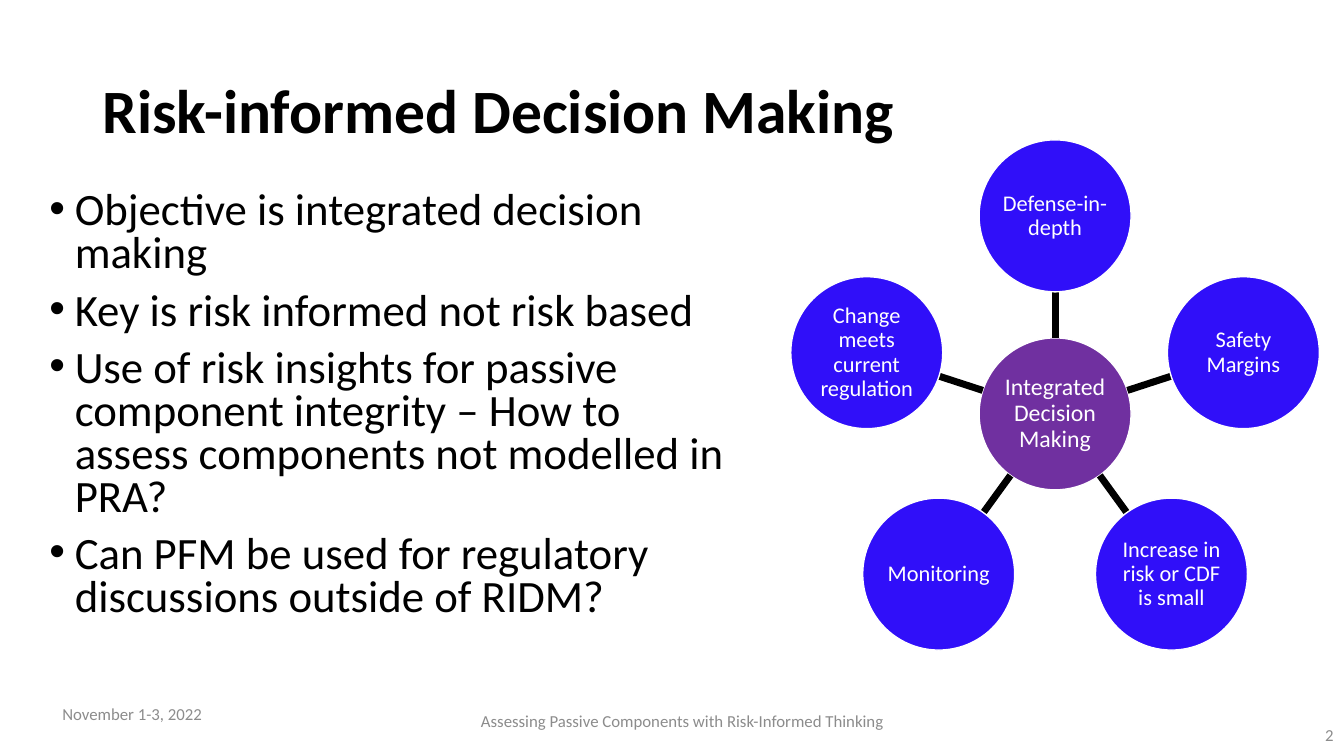
from dataclasses import dataclass
from math import cos, pi, sin

from lxml.etree import SubElement
from pptx import Presentation
from pptx.dml.color import RGBColor
from pptx.enum.shapes import MSO_CONNECTOR, MSO_SHAPE
from pptx.enum.text import MSO_ANCHOR, MSO_AUTO_SIZE, PP_ALIGN
from pptx.oxml.ns import qn
from pptx.util import Cm, Pt


@dataclass(frozen=True)
class Theme:
    font: str = "Calibri"
    ink: str = "000000"
    paper: str = "FFFFFF"
    hub: str = "7030A0"
    node: str = "300FF9"
    muted: str = "8C8C8C"
    title: int = 44
    body: int = 32
    core: int = 17
    label: int = 16
    foot: int = 12


class Deck:
    def __init__(self, theme, slide):
        self.theme = theme
        self.slide = slide

    def place(self, shape, box):
        shape.left, shape.top, shape.width, shape.height = map(Cm, box)

    def add_text(self, par, text, size, color, bold=False):
        run = par.add_run()
        run.text = text
        font = run.font
        font.name = self.theme.font
        font.size = Pt(size)
        font.bold = bold
        font.color.rgb = RGBColor.from_string(color)

    def title(self, text, box):
        shape = self.slide.shapes.title
        self.place(shape, box)
        frame = shape.text_frame
        frame.auto_size = MSO_AUTO_SIZE.NONE
        frame.vertical_anchor = MSO_ANCHOR.MIDDLE
        par = frame.paragraphs[0]
        par.alignment = PP_ALIGN.LEFT
        par.line_spacing = 0.9
        self.add_text(par, text, self.theme.title, self.theme.ink, True)

    def bullets(self, items, box):
        shape = self.slide.placeholders[1]
        self.place(shape, box)
        frame = shape.text_frame
        frame.auto_size = MSO_AUTO_SIZE.NONE
        for i, text in enumerate(items):
            par = frame.add_paragraph() if i else frame.paragraphs[0]
            props = par._p.get_or_add_pPr()
            props.set("marL", str(Cm(0.64)))
            props.set("indent", str(Cm(-0.64)))
            SubElement(props, qn("a:buFont"), typeface="Arial")
            SubElement(props, qn("a:buChar"), char="•")
            par.line_spacing = 0.8
            par.space_before = Pt(10 if i else 0)
            self.add_text(par, text, self.theme.body, self.theme.ink)

    def circle(self, text, x, y, width, fill, size):
        """Draw a labelled circle centred on x, y."""
        shape = self.slide.shapes.add_shape(
            MSO_SHAPE.OVAL, Cm(x - width / 2), Cm(y - width / 2), Cm(width), Cm(width))
        shape.shadow.inherit = False
        shape.fill.solid()
        shape.fill.fore_color.rgb = RGBColor.from_string(fill)
        shape.line.color.rgb = RGBColor.from_string(self.theme.paper)
        shape.line.width = Pt(1)
        frame = shape.text_frame
        frame.word_wrap = True
        frame.vertical_anchor = MSO_ANCHOR.MIDDLE
        frame.margin_left = frame.margin_right = Cm(0.03)
        frame.margin_top = frame.margin_bottom = Cm(0.03)
        par = frame.paragraphs[0]
        par.alignment = PP_ALIGN.CENTER
        par.line_spacing = 0.9
        self.add_text(par, text, size, self.theme.paper)

    def spoke(self, start, end):
        line = self.slide.shapes.add_connector(
            MSO_CONNECTOR.STRAIGHT, *map(Cm, start + end))
        line.line.color.rgb = RGBColor.from_string(self.theme.ink)
        line.line.width = Pt(5)
        SubElement(line._element.spPr, qn("a:effectLst"))

    def wheel(self, core, labels, x, y, reach, width):
        """Ring the core with labelled circles, clockwise from the top."""
        theme = self.theme
        self.circle(core, x, y, width, theme.hub, theme.core)

        def point(turn, far):
            return x + far * sin(turn), y - far * cos(turn)

        for i, text in enumerate(labels):
            turn = 2 * pi * i / len(labels)
            self.spoke(point(turn, width / 2), point(turn, reach - width / 2))
            self.circle(text, *point(turn, reach), width, theme.node, theme.label)

    def footer(self, text, box, align):
        frame = self.slide.shapes.add_textbox(*map(Cm, box)).text_frame
        frame.word_wrap = True
        frame.vertical_anchor = MSO_ANCHOR.MIDDLE
        par = frame.paragraphs[0]
        par.alignment = align
        self.add_text(par, text, self.theme.foot, self.theme.muted)


def main():
    show = Presentation()
    show.slide_width, show.slide_height = Cm(33.87), Cm(19.05)
    deck = Deck(Theme(), show.slides.add_slide(show.slide_layouts[1]))
    deck.title("Risk-informed Decision Making", (2.33, 1.01, 29.21, 3.68))
    deck.bullets([
        "Objective is integrated decision making",
        "Key is risk informed not risk based",
        "Use of risk insights for passive component integrity – "
        "How to assess components not modelled in PRA?",
        "Can PFM be used for regulatory discussions outside of RIDM?",
    ], (0.99, 4.7, 17.7, 11.66))
    deck.wheel("Integrated Decision Making", [
        "Defense-in-depth",
        "Safety Margins",
        "Increase in risk or CDF is small",
        "Monitoring",
        "Change meets current regulation",
    ], x=26.59, y=10.43, reach=4.99, width=3.83)
    deck.footer("November 1-3, 2022", (1.32, 17.48, 7.62, 1.02), PP_ALIGN.LEFT)
    deck.footer("Assessing Passive Components with Risk-Informed Thinking",
                (11.23, 17.65, 11.94, 1.02), PP_ALIGN.CENTER)
    deck.footer("2", (27.69, 18.14, 6.17, 0.74), PP_ALIGN.RIGHT)
    show.save("out.pptx")


if __name__ == "__main__":
    main()
